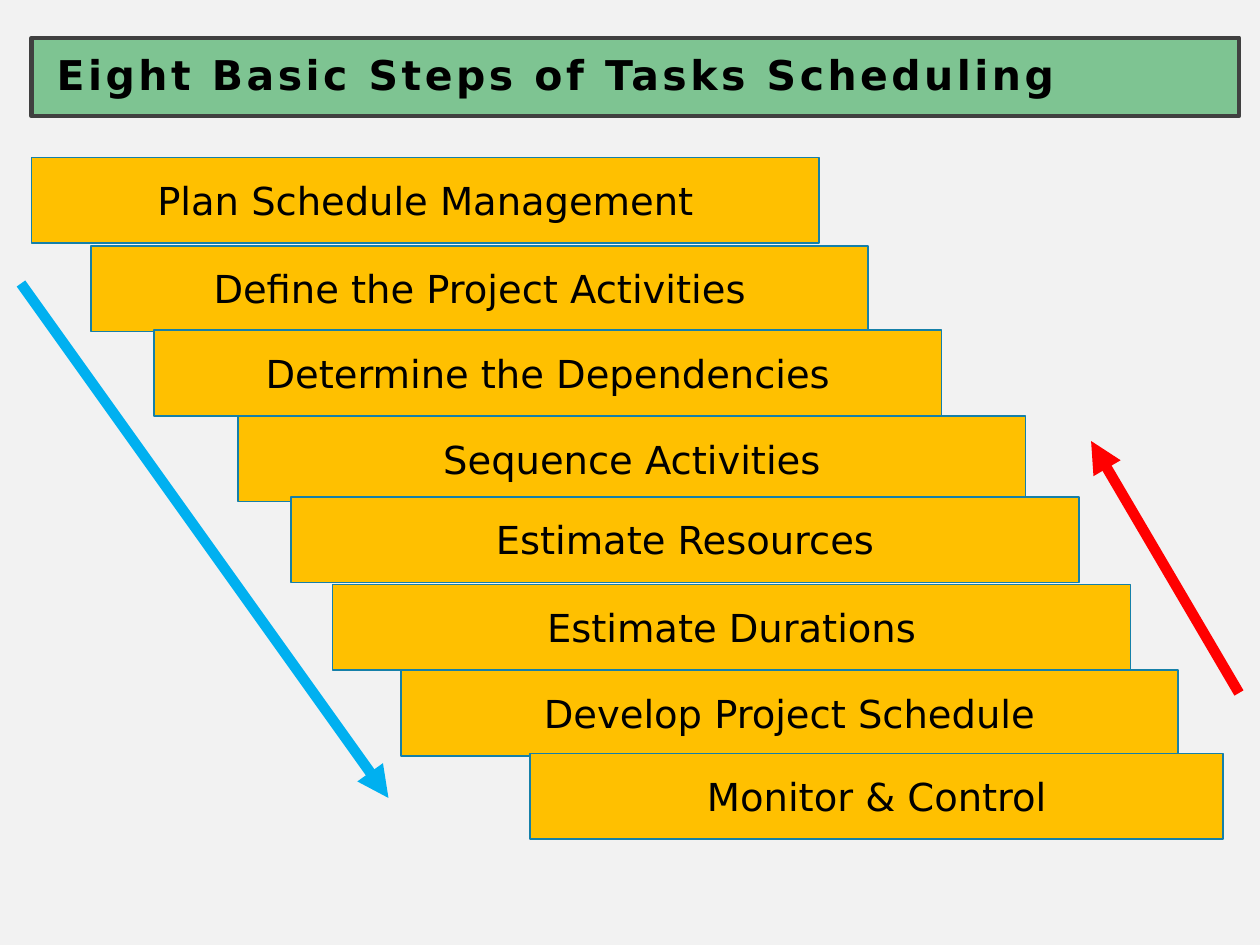
import pptx
import pptx.util
import pptx.dml.color
import pptx.enum.shapes
import pptx.enum.text
import pptx.oxml.ns
import lxml.etree

Pt = pptx.util.Pt
RGB = pptx.dml.color.RGBColor
ALIGN = pptx.enum.text.PP_ALIGN

BACKGROUND = RGB(0xF2, 0xF2, 0xF2)
TITLE_GREEN = RGB(0x7E, 0xC4, 0x92)
TITLE_BORDER = RGB(0x40, 0x40, 0x40)
STEP_AMBER = RGB(0xFF, 0xC0, 0x00)
STEP_BORDER = RGB(0x15, 0x80, 0xA9)
FORWARD_BLUE = RGB(0x00, 0xB0, 0xF0)
FEEDBACK_RED = RGB(0xFF, 0x00, 0x00)
BLACK = RGB(0x00, 0x00, 0x00)
FONT = "DejaVu Sans"

STEP_HEIGHT = 49
# Step name, left and top offset within the staircase, width
STEPS = [
    ("Plan Schedule Management", 0, 0, 450),
    ("Define the Project Activities", 34, 50.4, 444),
    ("Determine the Dependencies", 70, 98.6, 450),
    ("Sequence Activities", 118, 147.6, 450),
    ("Estimate Resources", 148.4, 193.8, 450),
    ("Estimate Durations", 172, 244, 456),
    ("Develop Project Schedule", 211, 293, 444),
    ("Monitor & Control", 285, 340.6, 396),
]


def add_bar(slide, box, text, fill, border, border_width, size, align):
    """Draw a bordered rectangle with one line of text; return the shape."""
    bar = slide.shapes.add_shape(
        pptx.enum.shapes.MSO_SHAPE.RECTANGLE, *(Pt(length) for length in box))
    bar.shadow.inherit = False
    bar.fill.solid()
    bar.fill.fore_color.rgb = fill
    bar.line.color.rgb = border
    bar.line.width = Pt(border_width)
    frame = bar.text_frame
    frame.word_wrap = True
    frame.vertical_anchor = pptx.enum.text.MSO_ANCHOR.MIDDLE
    frame.text = text
    frame.paragraphs[0].alignment = align
    font = frame.paragraphs[0].runs[0].font
    font.name = FONT
    font.size = Pt(size)
    font.color.rgb = BLACK
    return bar


def add_title(slide, box):
    """Title banner with bold, letter-spaced text."""
    banner = add_bar(slide, box, "Eight Basic Steps of Tasks Scheduling",
                     TITLE_GREEN, TITLE_BORDER, 2.5, 23.4, ALIGN.LEFT)
    frame = banner.text_frame
    frame.margin_left = frame.margin_right = Pt(14.4)
    frame.margin_top = frame.margin_bottom = Pt(14.4)
    heading = frame.paragraphs[0]
    heading.line_spacing = 0.9
    heading.runs[0].font.bold = True
    heading.runs[0].font._element.set("spc", "200")


def add_staircase(slide, left, top):
    """Eight steps descending to the right."""
    for name, step_left, step_top, width in STEPS:
        box = (left + step_left, top + step_top, width, STEP_HEIGHT)
        add_bar(slide, box, name, STEP_AMBER, STEP_BORDER, 1, 22, ALIGN.CENTER)


def add_arrow(slide, start, end, color):
    """Thick straight arrow pointing at its end."""
    arrow = slide.shapes.add_connector(
        pptx.enum.shapes.MSO_CONNECTOR.STRAIGHT,
        *(Pt(length) for length in start + end))
    arrow.line.color.rgb = color
    arrow.line.width = Pt(6)
    qn = pptx.oxml.ns.qn
    outline = arrow.line._get_or_add_ln()
    lxml.etree.SubElement(outline, qn("a:tailEnd"), type="triangle")
    lxml.etree.SubElement(arrow._element.spPr, qn("a:effectLst"))


def main():
    deck = pptx.Presentation()
    deck.slide_width, deck.slide_height = Pt(720), Pt(540)
    slide = deck.slides.add_slide(deck.slide_layouts[6])
    slide.background.fill.solid()
    slide.background.fill.fore_color.rgb = BACKGROUND

    add_title(slide, (18, 21.6, 690, 44.8))
    add_staircase(slide, 18, 90)

    # Forward flow and feedback
    add_arrow(slide, (12, 162), (222, 456), FORWARD_BLUE)
    add_arrow(slide, (708, 396), (623.5, 252), FEEDBACK_RED)

    deck.save("out.pptx")


if __name__ == "__main__":
    main()
